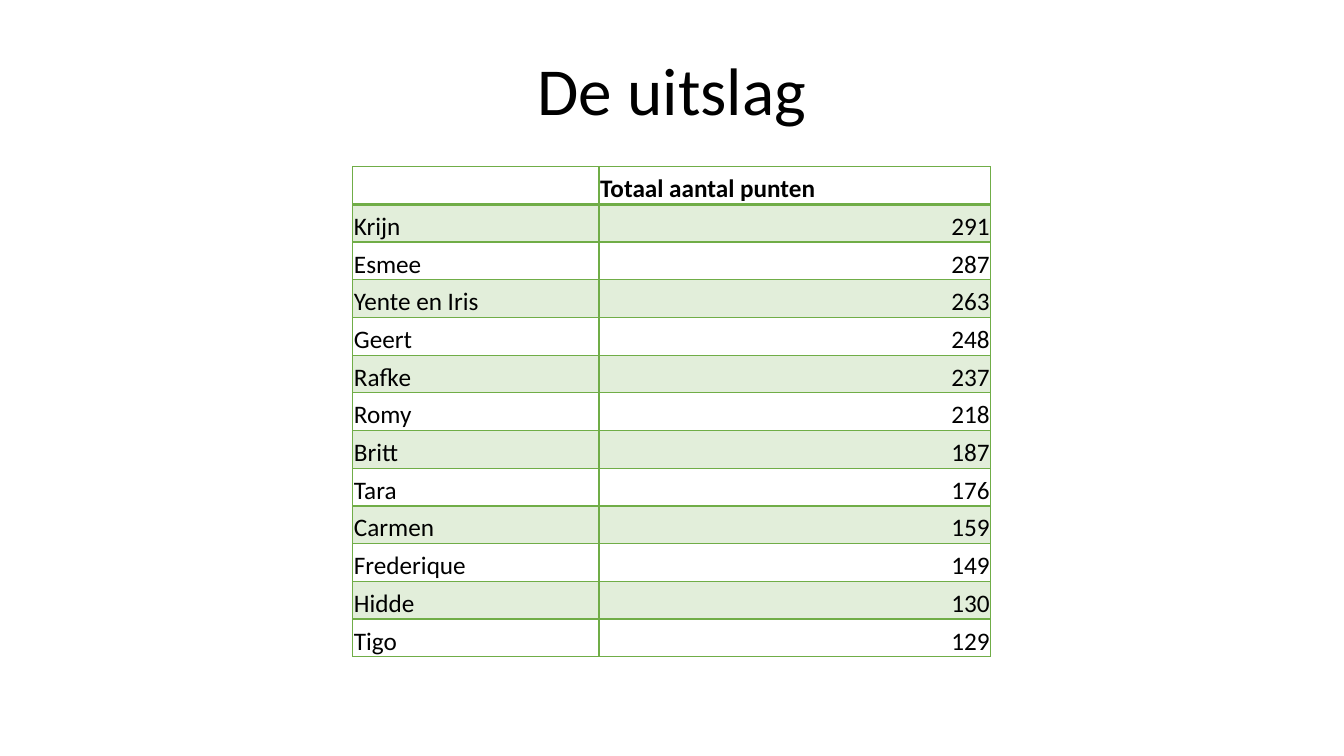
from dataclasses import dataclass

from lxml.etree import SubElement
from pptx import Presentation
from pptx.dml.color import RGBColor
from pptx.enum.text import MSO_ANCHOR, MSO_AUTO_SIZE, PP_ALIGN
from pptx.oxml import parse_xml
from pptx.oxml.ns import nsdecls, qn
from pptx.util import Cm, Pt


@dataclass(frozen=True)
class Theme:
    font: str = "Calibri"
    text: RGBColor = RGBColor(0, 0, 0)
    accent: RGBColor = RGBColor(0x70, 0xAD, 0x47)
    band_opacity: int = 20
    title_size: Pt = Pt(48)
    table_size: Pt = Pt(18)
    border: Pt = Pt(1)
    header_border: Pt = Pt(2)


THEME = Theme()

HEADER = ("", "Totaal aantal punten")
SCORES = [
    ("Krijn", 291),
    ("Esmee", 287),
    ("Yente en Iris", 263),
    ("Geert", 248),
    ("Rafke", 237),
    ("Romy", 218),
    ("Britt", 187),
    ("Tara", 176),
    ("Carmen", 159),
    ("Frederique", 149),
    ("Hidde", 130),
    ("Tigo", 129),
]
NAME_SHARE = 0.386
NO_STYLE_ID = "{2D5ABB26-0587-4C30-8999-92F81FD0307C}"


def style_paragraph(paragraph, size, align, bold=False):
    paragraph.alignment = align
    font = paragraph.font
    font.name, font.size, font.bold = THEME.font, size, bold
    font.color.rgb = THEME.text


def set_borders(cell, top, bottom):
    """Outline a cell; call before filling it, as borders precede the fill."""
    widths = {"lnL": THEME.border, "lnR": THEME.border, "lnT": top, "lnB": bottom}
    properties = cell._tc.get_or_add_tcPr()
    for side, width in widths.items():
        properties.append(parse_xml(
            f'<a:{side} {nsdecls("a")} w="{int(width)}"><a:solidFill>'
            f'<a:srgbClr val="{THEME.accent}"/></a:solidFill></a:{side}>'
        ))


def fill_band(cell):
    cell.fill.solid()
    cell.fill.fore_color.rgb = THEME.accent
    color = cell._tc.tcPr.find(qn("a:solidFill")).find(qn("a:srgbClr"))
    SubElement(color, qn("a:alpha"), val=str(THEME.band_opacity * 1000))


def add_title(slide, left, top, width, height):
    title = slide.shapes.title
    title.left, title.top, title.width, title.height = left, top, width, height
    frame = title.text_frame
    frame.text = "De uitslag"
    frame.auto_size = MSO_AUTO_SIZE.NONE
    frame.vertical_anchor = MSO_ANCHOR.BOTTOM
    heading = frame.paragraphs[0]
    heading.line_spacing = 0.9
    style_paragraph(heading, THEME.title_size, PP_ALIGN.CENTER)


def add_score_table(slide, left, top, width, height):
    rows = [HEADER, *SCORES]
    frame = slide.shapes.add_table(len(rows), len(HEADER), left, top, width, height)
    table = frame.table
    table.first_row = table.horz_banding = False
    table._tbl.tblPr.find(qn("a:tableStyleId")).text = NO_STYLE_ID
    table.columns[0].width = int(width * NAME_SHARE)
    table.columns[1].width = width - table.columns[0].width

    for row_index, row in enumerate(rows):
        is_header = row_index == 0
        top_border = THEME.header_border if row_index == 1 else THEME.border
        bottom_border = THEME.header_border if is_header else THEME.border
        for column, value in enumerate(row):
            cell = table.cell(row_index, column)
            cell.text = str(value)
            cell.vertical_anchor = MSO_ANCHOR.BOTTOM
            cell.margin_left = cell.margin_right = cell.margin_top = Cm(0.03)
            cell.margin_bottom = 0
            align = PP_ALIGN.RIGHT if column and not is_header else PP_ALIGN.LEFT
            style_paragraph(cell.text_frame.paragraphs[0], THEME.table_size, align, is_header)
            set_borders(cell, top_border, bottom_border)
            if row_index % 2:
                fill_band(cell)
            else:
                cell.fill.background()


def main():
    deck = Presentation()
    deck.slide_width, deck.slide_height = Cm(33.87), Cm(19.05)
    slide = deck.slides.add_slide(deck.slide_layouts[5])
    add_title(slide, Cm(2.33), Cm(0.81), Cm(29.21), Cm(2.59))
    add_score_table(slide, Cm(8.89), Cm(4.2), Cm(16.08), Cm(12.35))
    deck.save("out.pptx")


if __name__ == "__main__":
    main()
